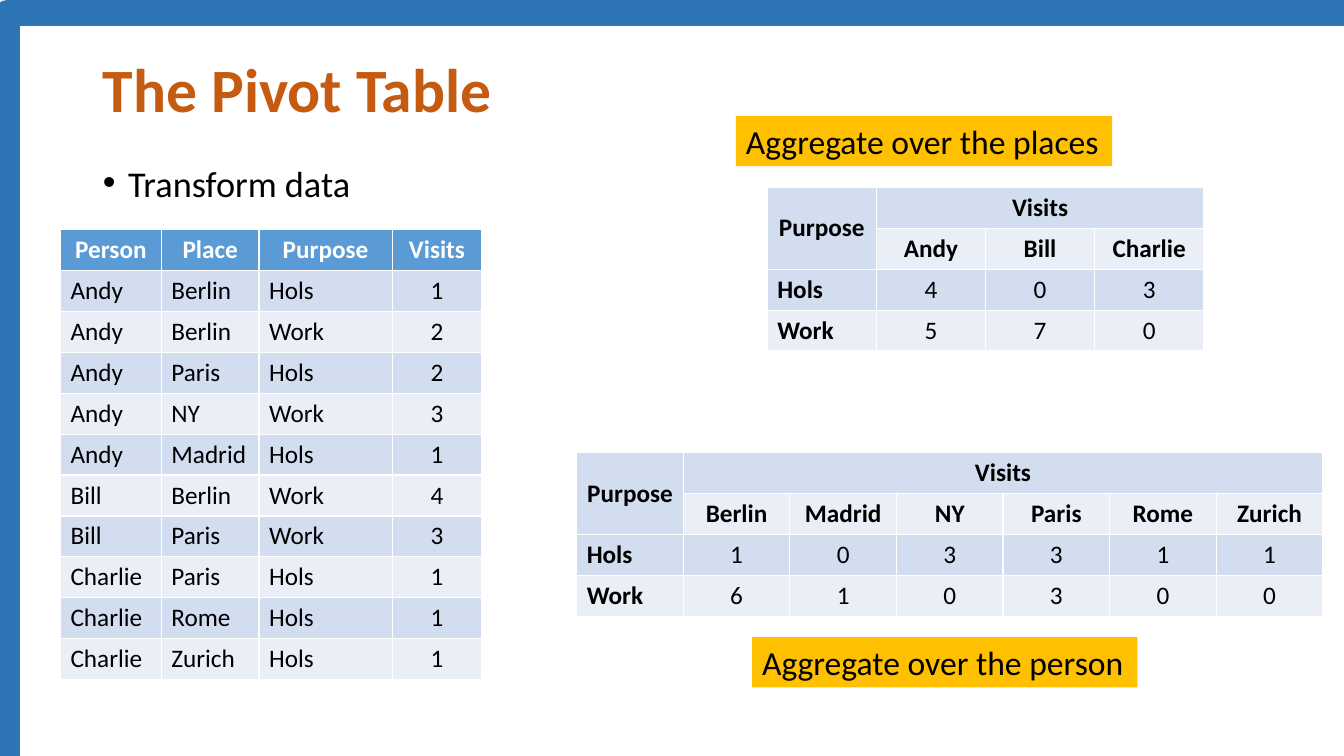
from dataclasses import dataclass
from pptx import Presentation as Deck
from pptx.dml.color import RGBColor as Rgb
from pptx.enum.shapes import MSO_SHAPE as Form
from pptx.enum.text import MSO_ANCHOR as Anchor, MSO_AUTO_SIZE as Fit, PP_ALIGN as Align
from pptx.util import Inches, Pt


@dataclass(frozen=True)
class Theme:
    font: str = "Calibri"
    frame: str = "2E75B6"
    title: str = "C55A11"
    ink: str = "000000"
    white: str = "FFFFFF"
    head: str = "5B9BD5"
    bands: tuple = ("D2DEEF", "EAEFF7")
    label: str = "FFC000"
    big: float = 44
    item: float = 25.9
    note: float = 24
    cell: float = 18


class Page:
    def __init__(self, deck, theme):
        self.theme = theme
        self.slide = deck.slides.add_slide(deck.slide_layouts[1])

    def style(self, frame, text, size, color, bold=False, align=Align.LEFT):
        frame.text = text
        para = frame.paragraphs[0]
        para.alignment = align
        font = para.runs[0].font
        font.name, font.size, font.bold = self.theme.font, Pt(size), bold
        font.color.rgb = Rgb.from_string(color)
        return para

    def paint(self, item, color):
        item.fill.solid()
        item.fill.fore_color.rgb = Rgb.from_string(color)

    def place(self, item, box):
        item.left, item.top, item.width, item.height = map(Inches, box)
        item.text_frame.auto_size = Fit.NONE
        return item.text_frame

    def border(self, box):
        edge = self.slide.shapes.add_shape(Form.RECTANGLE, *map(Inches, box))
        edge.shadow.inherit = False
        edge.fill.background()
        edge.line.color.rgb = Rgb.from_string(self.theme.frame)
        edge.line.width = Pt(18)

    def title(self, text, box):
        frame = self.place(self.slide.shapes.title, box)
        frame.vertical_anchor = Anchor.MIDDLE
        para = self.style(frame, text, self.theme.big, self.theme.title, True)
        para.line_spacing = 0.9

    def bullet(self, text, box):
        frame = self.place(self.slide.placeholders[1], box)
        para = self.style(frame, text, self.theme.item, self.theme.ink)
        para.line_spacing, para.space_before = 0.8, Pt(10)
        props = para._p.get_or_add_pPr()
        props.set("marL", str(Inches(0.25)))
        props.set("indent", str(-Inches(0.25)))

    def label(self, text, box):
        note = self.slide.shapes.add_shape(Form.RECTANGLE, *map(Inches, box))
        note.shadow.inherit = False
        note.line.fill.background()
        self.paint(note, self.theme.label)
        note.text_frame.word_wrap = False
        note.text_frame.auto_size = Fit.SHAPE_TO_FIT_TEXT
        self.style(note.text_frame, text, self.theme.note, self.theme.ink)

    def grid(self, rows, box, head):
        shape = self.slide.shapes.add_table(len(rows), len(rows[0]), *map(Inches, box))
        table = shape.table
        table.first_row = head
        for y, row in enumerate(rows):
            for x, text in enumerate(row):
                cell = table.cell(y, x)
                top = head and y == 0
                band = self.theme.bands[(y - head) % 2]
                self.paint(cell, self.theme.head if top else band)
                if text == "":
                    continue
                bold = top or not head and (y < 2 or x == 0)
                mid = top or str(text).isdigit() or not head and y < 2
                self.style(cell.text_frame, str(text), self.theme.cell,
                           self.theme.white if top else self.theme.ink,
                           bold, Align.CENTER if mid else Align.LEFT)
        return table

    def records(self, rows, box, widths):
        table = self.grid(rows, box, True)
        for col, width in zip(table.columns, widths):
            col.width = Inches(width)

    def pivot(self, names, hols, work, box):
        rows = [["Purpose", "Visits"] + [""] * (len(names) - 1),
                ["", *names], ["Hols", *hols], ["Work", *work]]
        table = self.grid(rows, box, False)
        table.cell(0, 0).merge(table.cell(1, 0))
        table.cell(0, 1).merge(table.cell(0, len(names)))
        table.cell(0, 0).vertical_anchor = Anchor.MIDDLE


VISITS = [
    ("Person", "Place", "Purpose", "Visits"),
    ("Andy", "Berlin", "Hols", 1),
    ("Andy", "Berlin", "Work", 2),
    ("Andy", "Paris", "Hols", 2),
    ("Andy", "NY", "Work", 3),
    ("Andy", "Madrid", "Hols", 1),
    ("Bill", "Berlin", "Work", 4),
    ("Bill", "Paris", "Work", 3),
    ("Charlie", "Paris", "Hols", 1),
    ("Charlie", "Rome", "Hols", 1),
    ("Charlie", "Zurich", "Hols", 1),
]


def main():
    deck = Deck()
    deck.slide_width, deck.slide_height = Inches(13.33), Inches(7.5)
    page = Page(deck, Theme())
    page.border((0.07, 0.13, 13.39, 7.55))
    page.title("The Pivot Table", (0.92, 0.4, 11.5, 1.04))
    page.bullet("Transform data", (0.92, 1.63, 11.5, 0.47))
    page.records(VISITS, (0.6, 2.28, 4.17, 4.46), (1, 0.97, 1.32, 0.89))
    page.pivot(("Andy", "Bill", "Charlie"), (4, 0, 3), (5, 7, 0),
               (7.61, 1.86, 4.33, 1.62))
    page.pivot(("Berlin", "Madrid", "NY", "Paris", "Rome", "Zurich"),
               (1, 0, 3, 3, 1, 1), (6, 1, 0, 3, 0, 0), (5.72, 4.49, 7.4, 1.62))
    page.label("Aggregate over the places", (7.3, 1.15, 3.73, 0.5))
    page.label("Aggregate over the person", (7.46, 6.32, 3.82, 0.5))
    deck.save("out.pptx")


if __name__ == "__main__":
    main()
